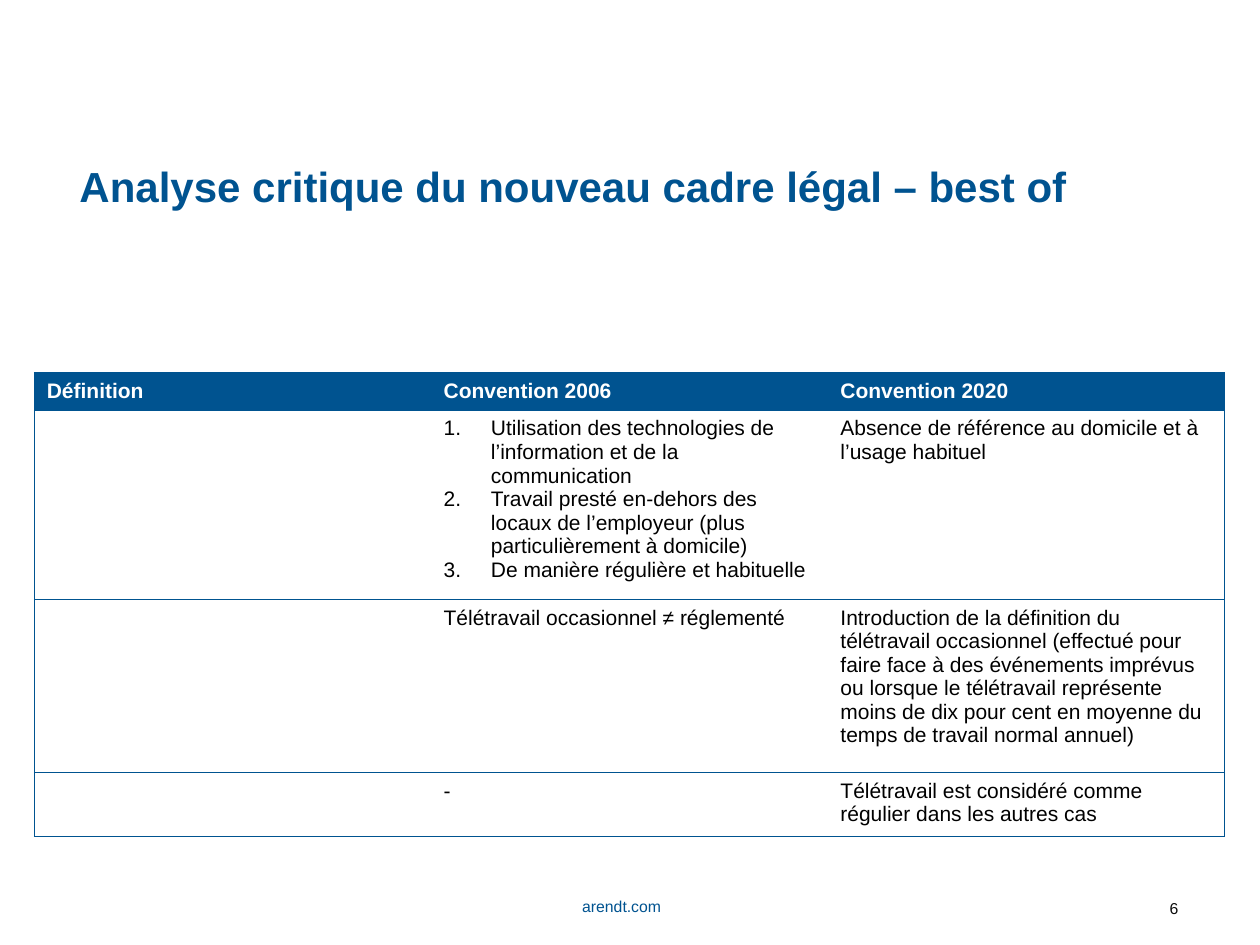
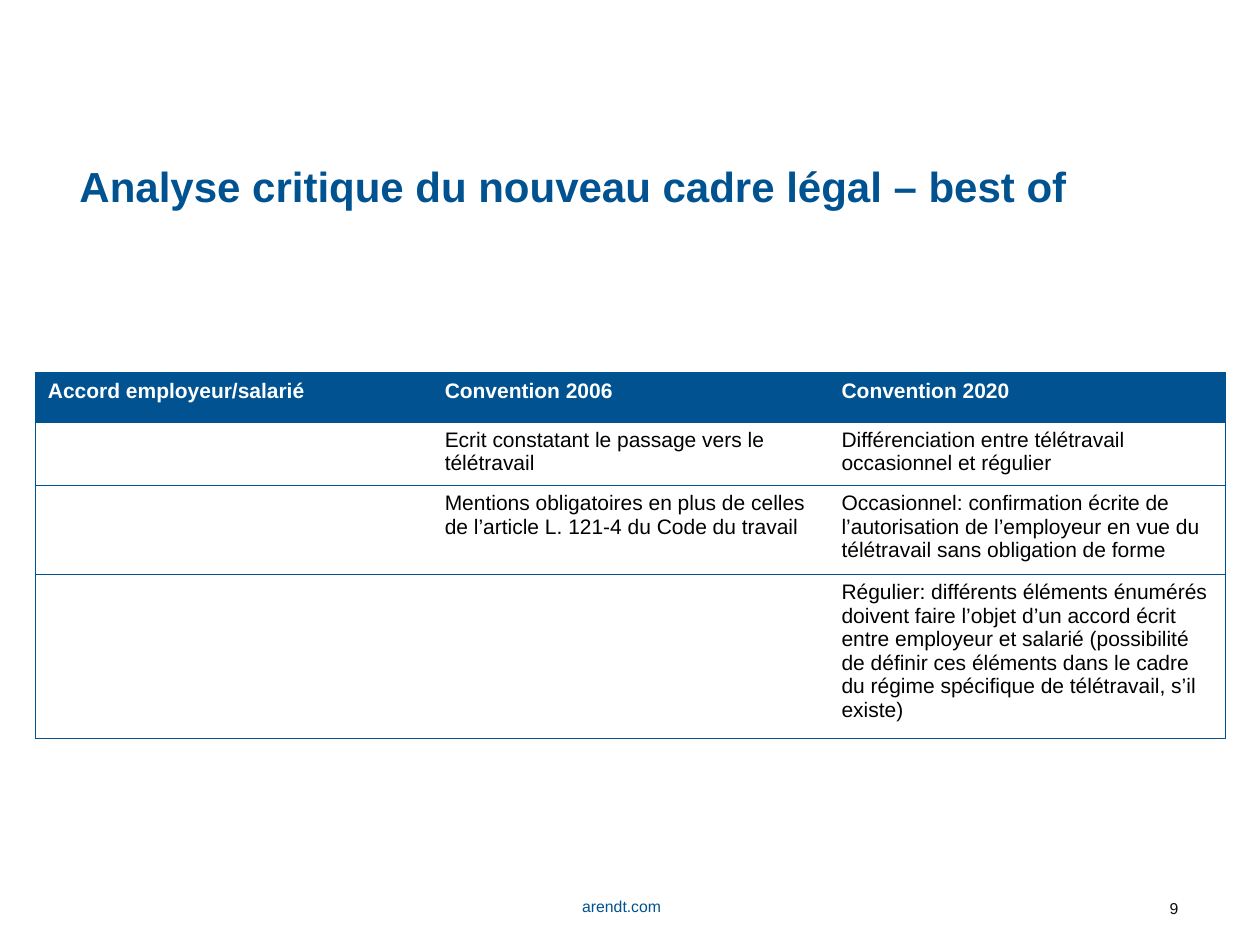
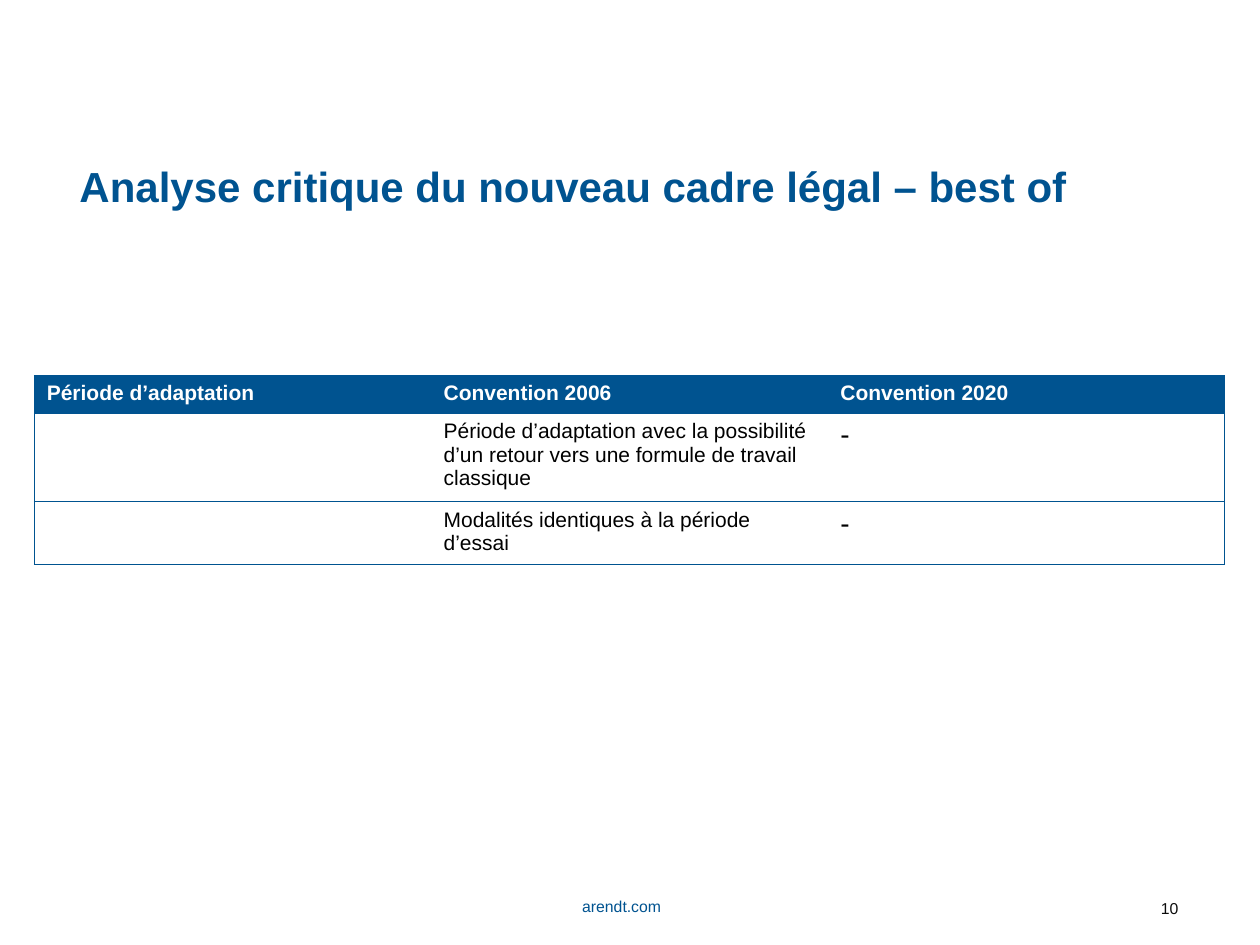
from lxml.etree import SubElement
from pptx import Presentation
from pptx.dml.color import RGBColor
from pptx.enum.text import MSO_ANCHOR as ANCHOR, MSO_AUTO_SIZE as AUTO, PP_ALIGN as ALIGN
from pptx.oxml.ns import qn
from pptx.util import Pt

BLUE, BLACK, WHITE, GREY = "005390", "000000", "FFFFFF", "0C0C0C"
FONT = "Arial"
TITLE = "Analyse critique du nouveau cadre légal – best of"
FOOTER = "arendt.com"
CONVENTIONS = ["Convention 2006", "Convention 2020"]
COL_WIDTH = 226.75
TEXT_SIZE = 12

SLIDES = [
    {
        "number": 6, "left": 19.6, "top": 213, "dash_size": 12,
        "topic": "Définition",
        "heights": [21, 101.2, 99, 34.2],
        "rows": [
            (["Utilisation des technologies de l’information et de la communication",
              "Travail presté en-dehors des locaux de l’employeur (plus particulièrement à domicile)",
              "De manière régulière et habituelle"],
             "Absence de référence au domicile et à l’usage habituel"),
            ("Télétravail occasionnel ≠ réglementé",
             "Introduction de la définition du télétravail occasionnel (effectué pour faire face "
             "à des événements imprévus ou lorsque le télétravail représente moins de dix pour "
             "cent en moyenne du temps de travail normal annuel)"),
            ("-", "Télétravail est considéré comme régulier dans les autres cas"),
        ],
    },
    {
        "number": 9, "left": 20.2, "top": 213, "dash_size": 12,
        "topic": "Accord employeur/salarié",
        "heights": [28.2, 34.2, 51, 88],
        "rows": [
            ("Ecrit constatant le passage vers le télétravail",
             "Différenciation entre télétravail occasionnel et régulier"),
            ("Mentions obligatoires en plus de celles de l’article L. 121-4 du Code du travail",
             "Occasionnel: confirmation écrite de l’autorisation de l’employeur en vue du "
             "télétravail sans obligation de forme"),
            ("",
             "Régulier: différents éléments énumérés doivent faire l’objet d’un accord écrit "
             "entre employeur et salarié (possibilité de définir ces éléments dans le cadre du "
             "régime spécifique de télétravail, s’il existe)"),
        ],
    },
    {
        "number": 10, "left": 19.6, "top": 214.6, "dash_size": 16,
        "topic": "Période d’adaptation",
        "heights": [20.6, 47.5, 34.2],
        "rows": [
            ("Période d’adaptation avec la possibilité d’un retour vers une formule de travail "
             "classique", "-"),
            ("Modalités identiques à la période d’essai", "-"),
        ],
    },
]


def rgb(color):
    """Turn a hex string into a colour."""
    return RGBColor.from_string(color)


def style(p, size, color, bold=False):
    """Format every run of a paragraph."""
    for r in p.runs:
        r.font.name, r.font.size, r.font.bold = FONT, Pt(size), bold
        r.font.color.rgb = rgb(color)


def place(s, left, top, width, height):
    """Move and size a shape, in points."""
    s.left, s.top, s.width, s.height = Pt(left), Pt(top), Pt(width), Pt(height)


def add_title(slide):
    """Fill the title placeholder."""
    s = slide.shapes.title
    place(s, 38.2, 78.5, 642.2, 59)
    tf = s.text_frame
    tf.text = TITLE
    tf.auto_size, tf.vertical_anchor = AUTO.NONE, ANCHOR.MIDDLE
    p = tf.paragraphs[0]
    p.alignment, p.line_spacing = ALIGN.LEFT, 0.9
    style(p, 24, BLUE, True)


def add_label(slide, text, box, align, anchor, color):
    """Add a small text at the foot of the slide."""
    tf = slide.shapes.add_textbox(*map(Pt, box)).text_frame
    tf.word_wrap, tf.vertical_anchor = True, anchor
    tf.text = text
    tf.paragraphs[0].alignment = align
    style(tf.paragraphs[0], 9, color)


def number_paragraph(p):
    """Give a paragraph an automatic number and a hanging indent."""
    pPr = p._p.get_or_add_pPr()
    pPr.set("marL", str(Pt(27)))
    pPr.set("indent", str(-Pt(27)))
    SubElement(pPr, qn("a:buFont"), typeface="+mj-lt")
    SubElement(pPr, qn("a:buAutoNum"), type="arabicPeriod")


def set_borders(cell, sides):
    """Draw the given sides of a cell and clear the others."""
    tcPr = cell._tc.get_or_add_tcPr()
    for side in "LRTB":
        ln = SubElement(tcPr, qn("a:ln" + side), w=str(Pt(0.5)))
        if side in sides:
            fill = SubElement(ln, qn("a:solidFill"))
            SubElement(fill, qn("a:srgbClr"), val=BLUE)
        else:
            SubElement(ln, qn("a:noFill"))


def fill_cell(cell, content, header, dash_size):
    """Write and format one cell; a list becomes numbered paragraphs."""
    numbered = isinstance(content, list)
    cell.text_frame.text = "\n".join(content) if numbered else content
    cell.fill.solid()
    cell.fill.fore_color.rgb = rgb(BLUE if header else WHITE)
    for p in cell.text_frame.paragraphs:
        if numbered:
            number_paragraph(p)
        style(p, dash_size if content == "-" else TEXT_SIZE, WHITE if header else BLACK, header)


def add_comparison(slide, data):
    """Add the table that compares both conventions."""
    rows = [[data["topic"], *CONVENTIONS]] + [["", *row] for row in data["rows"]]
    n_cols = len(rows[0])
    size = COL_WIDTH * n_cols, sum(data["heights"])
    table = slide.shapes.add_table(
        len(rows), n_cols, *map(Pt, (data["left"], data["top"], *size))).table
    table.horz_banding = False
    for col in table.columns:
        col.width = Pt(COL_WIDTH)
    for i, (row, height) in enumerate(zip(rows, data["heights"])):
        table.rows[i].height = Pt(height)
        for j, content in enumerate(row):
            cell = table.cell(i, j)
            set_borders(cell, "TB" + "L" * (j == 0) + "R" * (j == n_cols - 1))
            fill_cell(cell, content, i == 0, data["dash_size"])


def main():
    """Build the presentation."""
    prs = Presentation()
    prs.slide_width, prs.slide_height = Pt(720), Pt(540)
    for data in SLIDES:
        slide = prs.slides.add_slide(prs.slide_layouts[5])
        add_label(slide, str(data["number"]), (646.5, 509.8, 34, 21),
                  ALIGN.RIGHT, ANCHOR.TOP, GREY)
        add_label(slide, FOOTER, (295.2, 505.4, 120, 24.5), ALIGN.CENTER, ANCHOR.MIDDLE, BLUE)
        add_title(slide)
        add_comparison(slide, data)
    prs.save("out.pptx")


if __name__ == "__main__":
    main()
